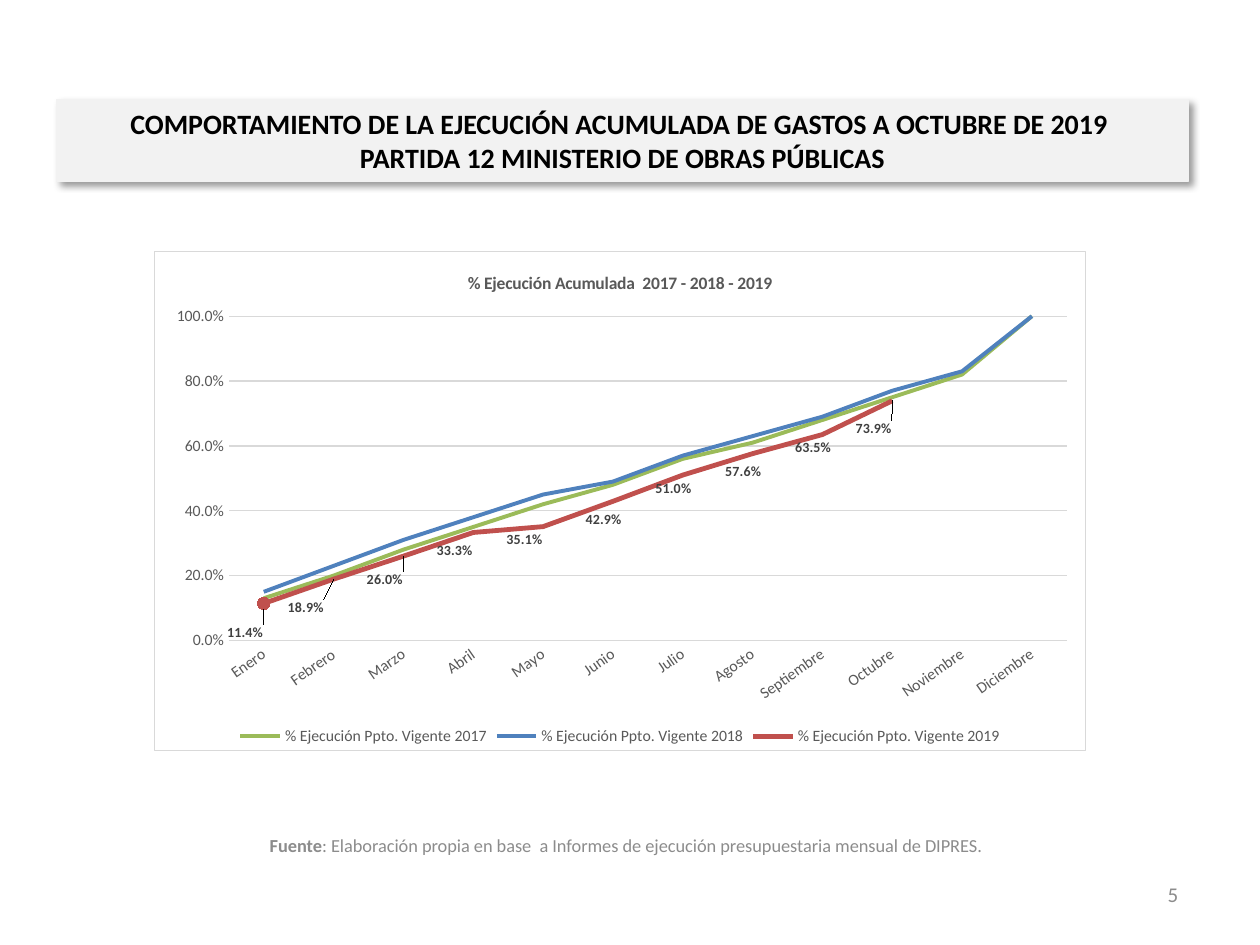
"""Build the slide on accumulated budget execution, 2017 to 2019."""
import pptx
import pptx.chart.data
import pptx.dml.color
import pptx.enum.chart
import pptx.enum.text
import pptx.oxml
import pptx.oxml.ns
import pptx.util

FONT = "Calibri"
WIDTH, HEIGHT = 10, 7.5
GREY, RULE, MUTED = "595959", "D9D9D9", "8C8C8C"
HEADING = ("COMPORTAMIENTO DE LA EJECUCIÓN ACUMULADA DE GASTOS A OCTUBRE DE 2019 \v"
           "PARTIDA 12 MINISTERIO DE OBRAS PÚBLICAS")
SOURCE = [("Fuente", True),
          (": Elaboración propia en base  a Informes de ejecución presupuestaria mensual de DIPRES.", False)]
PAGE = [("5", False)]
CHART_TITLE = "% Ejecución Acumulada  2017 - 2018 - 2019"
MONTHS = ["Enero", "Febrero", "Marzo", "Abril", "Mayo", "Junio", "Julio",
          "Agosto", "Septiembre", "Octubre", "Noviembre", "Diciembre"]
EXECUTION = [
    (2017, "9BBB59", 2.25, [0.13, 0.2, 0.28, 0.35, 0.42, 0.48, 0.56, 0.61, 0.68, 0.75, 0.82, 1]),
    (2018, "4F81BD", 2.25, [0.15, 0.23, 0.31, 0.38, 0.45, 0.49, 0.57, 0.63, 0.69, 0.77, 0.83, 1]),
    (2019, "C0504D", 2.75, [0.114, 0.189, 0.26, 0.333, 0.351, 0.429, 0.51, 0.576, 0.635, 0.739,
                            None, None]),
]
LABEL_SHIFTS = [(-0.02, 0.02), (-0.03, 0.03), (-0.02, 0.02), (-0.02, 0.01), (-0.02, 0),
                (-0.01, 0.01), (-0.01, 0), (-0.01, 0.01), (-0.01, 0), (-0.02, 0.03)]
PLOT_AREA = {"x": 0.08, "y": 0.13, "w": 0.9, "h": 0.65}


def rgb(value):
    return pptx.dml.color.RGBColor.from_string(value)


def xml(tag, content):
    ns = pptx.oxml.ns.nsdecls(tag.split(":")[0], *({"a", "c"} - {tag.split(":")[0]}))
    return pptx.oxml.parse_xml(f"<{tag} {ns}{content}")


def style(font, size, color, bold=False):
    font.name, font.size, font.bold = FONT, pptx.util.Pt(size), bold
    font.color.rgb = rgb(color)


def stroke(line, color, width):
    line.color.rgb = rgb(color)
    line.width = pptx.util.Pt(width)


def manual_layout(modes, shares):
    values = "".join(f'<c:{key} val="{value}"/>' for key, value in shares.items())
    return xml("c:layout", f"><c:manualLayout>{modes}{values}</c:manualLayout></c:layout>")


def box(left, top, width, height):
    return [pptx.util.Inches(value) for value in (left, top, width, height)]


def add_note(slide, place, pieces, size, alignment):
    frame = slide.shapes.add_textbox(*box(*place)).text_frame
    frame.word_wrap = True
    frame.vertical_anchor = pptx.enum.text.MSO_ANCHOR.MIDDLE
    paragraph = frame.paragraphs[0]
    paragraph.alignment = alignment
    for text, bold in pieces:
        run = paragraph.add_run()
        run.text = text
        style(run.font, size, MUTED, bold)


def add_heading(slide):
    heading = slide.shapes.title
    heading.left, heading.top, heading.width, heading.height = box(0.45, 0.79, 8.98, 0.65)
    heading.fill.solid()
    heading.fill.fore_color.rgb = rgb("F2F2F2")
    stroke(heading.line, "F2F2F2", 0.75)
    heading._element.spPr.append(xml(
        "a:effectLst", '><a:outerShdw blurRad="50800" dist="38100" dir="2700000" algn="tl" rotWithShape="0">'
        '<a:srgbClr val="000000"><a:alpha val="40000"/></a:srgbClr></a:outerShdw></a:effectLst>'))
    frame = heading.text_frame
    frame.text = HEADING
    frame.word_wrap = True
    frame.auto_size = pptx.enum.text.MSO_AUTO_SIZE.NONE
    frame.vertical_anchor = pptx.enum.text.MSO_ANCHOR.MIDDLE
    frame.paragraphs[0].alignment = pptx.enum.text.PP_ALIGN.CENTER
    style(frame.paragraphs[0].font, 16, "000000", True)


def style_axes(chart):
    months, share = chart.category_axis, chart.value_axis
    for axis in (months, share):
        style(axis.tick_labels.font, 9, GREY)
        axis.major_tick_mark = axis.minor_tick_mark = pptx.enum.chart.XL_TICK_MARK.NONE
    stroke(months.format.line, RULE, 1)
    months._element.find(pptx.oxml.ns.qn("c:txPr")).bodyPr.set("rot", "-2100000")
    share.minimum_scale, share.maximum_scale, share.major_unit = 0, 1, 0.2
    share.tick_labels.number_format = "0.0%"
    share.tick_labels.number_format_is_linked = False
    share.format.line.fill.background()
    stroke(share.major_gridlines.format.line, RULE, 0.75)


def style_series(chart):
    for series, (year, color, width, shares) in zip(chart.plots[0].series, EXECUTION):
        series.smooth = False
        series.marker.style = pptx.enum.chart.XL_MARKER_STYLE.NONE
        stroke(series.format.line, color, width)
    start = series.points[0]
    start.marker.style, start.marker.size = pptx.enum.chart.XL_MARKER_STYLE.CIRCLE, 7
    start.marker.format.fill.solid()
    start.marker.format.fill.fore_color.rgb = rgb(color)
    stroke(start.marker.format.line, color, 0.75)
    stroke(start.format.line, color, width)
    for month, (dx, dy) in enumerate(LABEL_SHIFTS):
        label = series.points[month].data_label
        style(label.font, 8, "404040", True)
        label.position = pptx.enum.chart.XL_LABEL_POSITION.BELOW
        entry = series._element.dLbls.dLbl_lst[month]
        entry.insert(1, manual_layout("", {"x": dx, "y": dy}))


def add_execution_chart(slide):
    data = pptx.chart.data.CategoryChartData(number_format="0.0%")
    data.categories = MONTHS
    for year, color, width, shares in EXECUTION:
        data.add_series(f"% Ejecución Ppto. Vigente {year}", shares)
    chart = slide.shapes.add_chart(pptx.enum.chart.XL_CHART_TYPE.LINE,
                                   *box(1.22, 1.99, 7.4, 3.97), data).chart
    style(chart.font, 10, "000000")
    chart.plots[0].vary_by_categories = False
    chart.chart_title.text_frame.text = CHART_TITLE
    style(chart.chart_title.text_frame.paragraphs[0].font, 10, GREY, True)
    chart.has_legend = True
    chart.legend.position = pptx.enum.chart.XL_LEGEND_POSITION.BOTTOM
    chart.legend.include_in_layout = False
    style(chart.legend.font, 9, GREY)
    style_axes(chart)
    style_series(chart)

    space = chart._chartSpace
    space.find(pptx.oxml.ns.qn("c:date1904")).addnext(xml("c:roundedCorners", ' val="0"/>'))
    space.find(pptx.oxml.ns.qn("c:txPr")).addprevious(xml(
        "c:spPr", '><a:solidFill><a:srgbClr val="FFFFFF"/></a:solidFill><a:ln w="9525"><a:solidFill>'
        f'<a:srgbClr val="{RULE}"/></a:solidFill></a:ln></c:spPr>'))
    plot_area = space.chart.plotArea
    for automatic in plot_area.findall(pptx.oxml.ns.qn("c:layout")):
        plot_area.remove(automatic)
    plot_area.insert(0, manual_layout(
        '<c:layoutTarget val="inner"/><c:xMode val="edge"/><c:yMode val="edge"/>', PLOT_AREA))


def main():
    deck = pptx.Presentation()
    deck.slide_width, deck.slide_height = pptx.util.Inches(WIDTH), pptx.util.Inches(HEIGHT)
    slide = deck.slides.add_slide(deck.slide_layouts.get_by_name("Title Only"))
    add_heading(slide)
    add_execution_chart(slide)
    add_note(slide, (0.61, 6.51, 8.72, 0.4), SOURCE, 10.5, pptx.enum.text.PP_ALIGN.CENTER)
    add_note(slide, (7.12, 6.9, 2.33, 0.4), PAGE, 12, pptx.enum.text.PP_ALIGN.RIGHT)
    deck.save("out.pptx")


if __name__ == "__main__":
    main()
